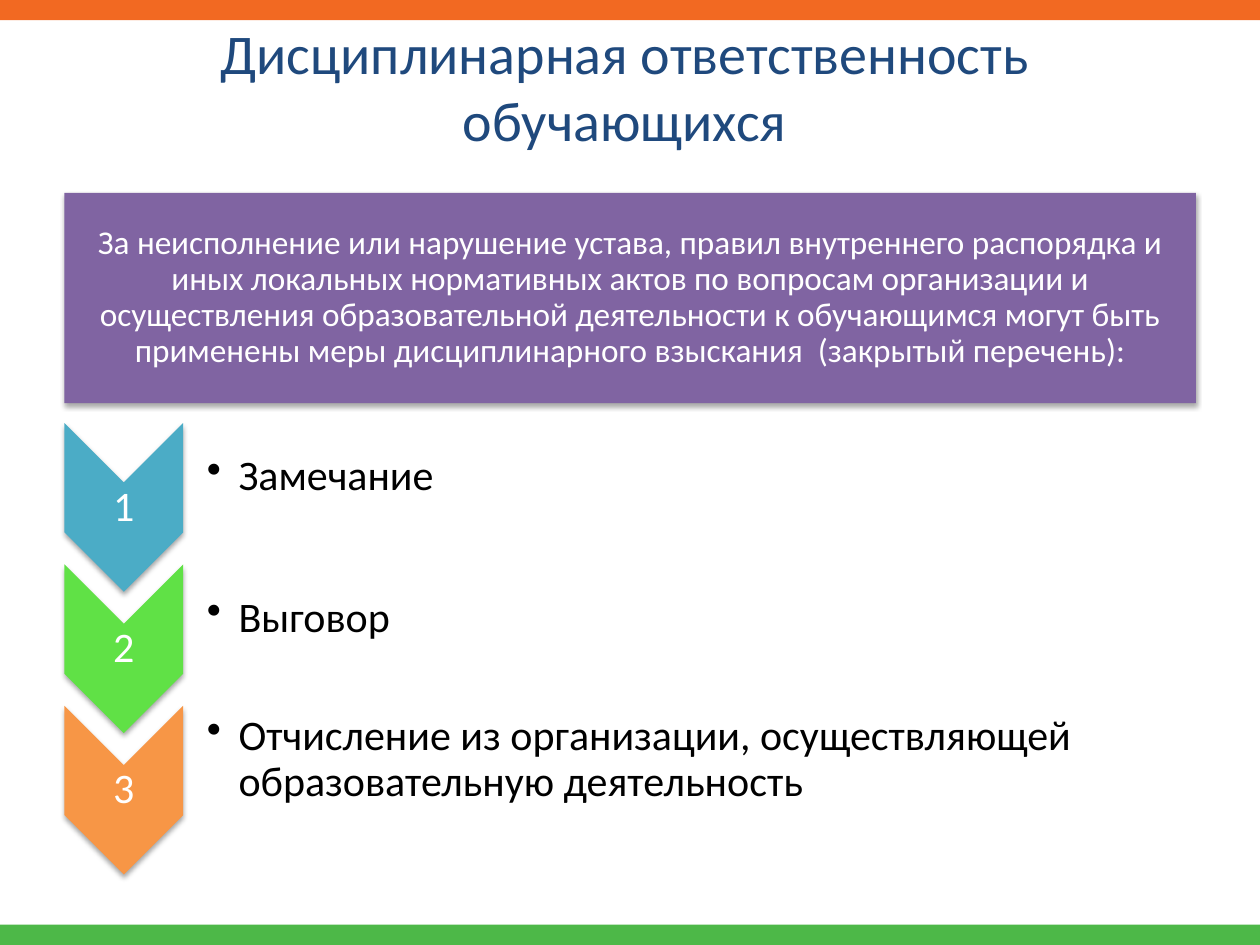
from lxml.etree import SubElement
from pptx import Presentation
from pptx.dml.color import RGBColor
from pptx.enum.shapes import MSO_SHAPE
from pptx.enum.text import MSO_ANCHOR, PP_ALIGN
from pptx.oxml.ns import qn
from pptx.util import Cm, Pt

WIDTH, HEIGHT = 25.4, 19.05
BAR_HEIGHT = 0.41
MARGIN = 1.3
STEP_PITCH = 2.85
CHEVRON_WIDTH, CHEVRON_HEIGHT = 2.39, 3.4

STEPS = [
    ("4BACC6", "Замечание"),
    ("60E146", "Выговор"),
    ("F79646", "Отчисление из организации, осуществляющей образовательную деятельность"),
]
RULE = (
    "За неисполнение или нарушение устава, правил внутреннего распорядка и иных "
    "локальных нормативных актов по вопросам организации и осуществления "
    "образовательной деятельности к обучающимся могут быть применены меры "
    "дисциплинарного взыскания  (закрытый перечень):"
)


def color(value):
    """Turn a hex string into a colour."""
    return RGBColor.from_string(value)


def add_block(page, kind, left, top, width, height, fill):
    """Add a plain filled shape without outline or shadow."""
    block = page.shapes.add_shape(kind, Cm(left), Cm(top), Cm(width), Cm(height))
    block.shadow.inherit = False
    block.fill.solid()
    block.fill.fore_color.rgb = color(fill)
    block.line.fill.background()
    return block


def add_shadow(block):
    """Give a shape a soft shadow that falls straight down."""
    effects = block._element.spPr.find(qn("a:effectLst"))
    shadow = SubElement(effects, qn("a:outerShdw"), blurRad=str(Pt(3.1)),
                        dist=str(Pt(1.8)), dir="5400000", rotWithShape="0")
    black = SubElement(shadow, qn("a:srgbClr"), val="000000")
    SubElement(black, qn("a:alpha"), val="35000")


def write(shape, text, size, fill, inset, align=PP_ALIGN.CENTER, spacing=0.9):
    """Write one vertically centred paragraph into a shape and return it."""
    frame = shape.text_frame
    frame.word_wrap = True
    frame.vertical_anchor = MSO_ANCHOR.MIDDLE
    frame.margin_left = frame.margin_right = Cm(inset)
    frame.margin_top = frame.margin_bottom = Cm(min(inset, 0.2))
    frame.text = text
    para = frame.paragraphs[0]
    para.alignment = align
    para.line_spacing = spacing
    for span in para.runs:
        span.font.name = "Calibri"
        span.font.size = Pt(size)
        span.font.color.rgb = color(fill)
    return para


def add_label(page, left, top, width, height, *args, **options):
    """Add a text box and return its paragraph."""
    box = page.shapes.add_textbox(Cm(left), Cm(top), Cm(width), Cm(height))
    return write(box, *args, **options)


def add_bullet(para):
    """Give a paragraph a hanging round bullet."""
    properties = para._p.get_or_add_pPr()
    properties.set("marL", str(Cm(0.64)))
    properties.set("indent", str(Cm(-0.64)))
    SubElement(properties, qn("a:buChar"), char="•")


def add_step(page, left, top, width, number, fill, text):
    """Add a numbered chevron pointing down and its bulleted text."""
    shift = (CHEVRON_HEIGHT - CHEVRON_WIDTH) / 2
    chevron = add_block(page, MSO_SHAPE.CHEVRON, left - shift, top + shift,
                        CHEVRON_HEIGHT, CHEVRON_WIDTH, fill)
    chevron.rotation = 90
    add_shadow(chevron)
    add_label(page, left, top + 1.19, CHEVRON_WIDTH, 1.02,
              str(number), 24, "FFFFFF", 0.04)
    para = add_label(page, left + CHEVRON_WIDTH, top + 0.1, width - CHEVRON_WIDTH, 1.98,
                     text, 24, "000000", 0.48, align=PP_ALIGN.LEFT)
    add_bullet(para)


def add_rule(page, left, top, width, height):
    """Add the purple panel with the rule."""
    panel = add_block(page, MSO_SHAPE.RECTANGLE, left, top, width, height, "8064A2")
    add_shadow(panel)
    write(panel, RULE, 19, "FFFFFF", 0.2)


def add_steps(page, left, top, width):
    """Stack the steps at an equal pitch."""
    for index, (fill, text) in enumerate(STEPS):
        add_step(page, left, top + index * STEP_PITCH, width, index + 1, fill, text)


def add_bars(page):
    """Add the coloured bars along the top and bottom edges."""
    for top, fill in ((0, "F26922"), (HEIGHT - BAR_HEIGHT, "4DB848")):
        add_block(page, MSO_SHAPE.RECTANGLE, 0, top, WIDTH, BAR_HEIGHT, fill)


def main():
    """Build and save the slide."""
    deck = Presentation()
    deck.slide_width, deck.slide_height = Cm(WIDTH), Cm(HEIGHT)
    page = deck.slides.add_slide(deck.slide_layouts[6])
    add_steps(page, MARGIN, 8.53, 22.76)
    add_rule(page, MARGIN, 3.89, 22.81, 4.24)
    add_bars(page)
    add_label(page, MARGIN, 0.64, 22.6, 2.16, "Дисциплинарная ответственность обучающихся",
              32, "1F497D", 0.25, spacing=1.0)
    deck.save("out.pptx")


if __name__ == "__main__":
    main()
